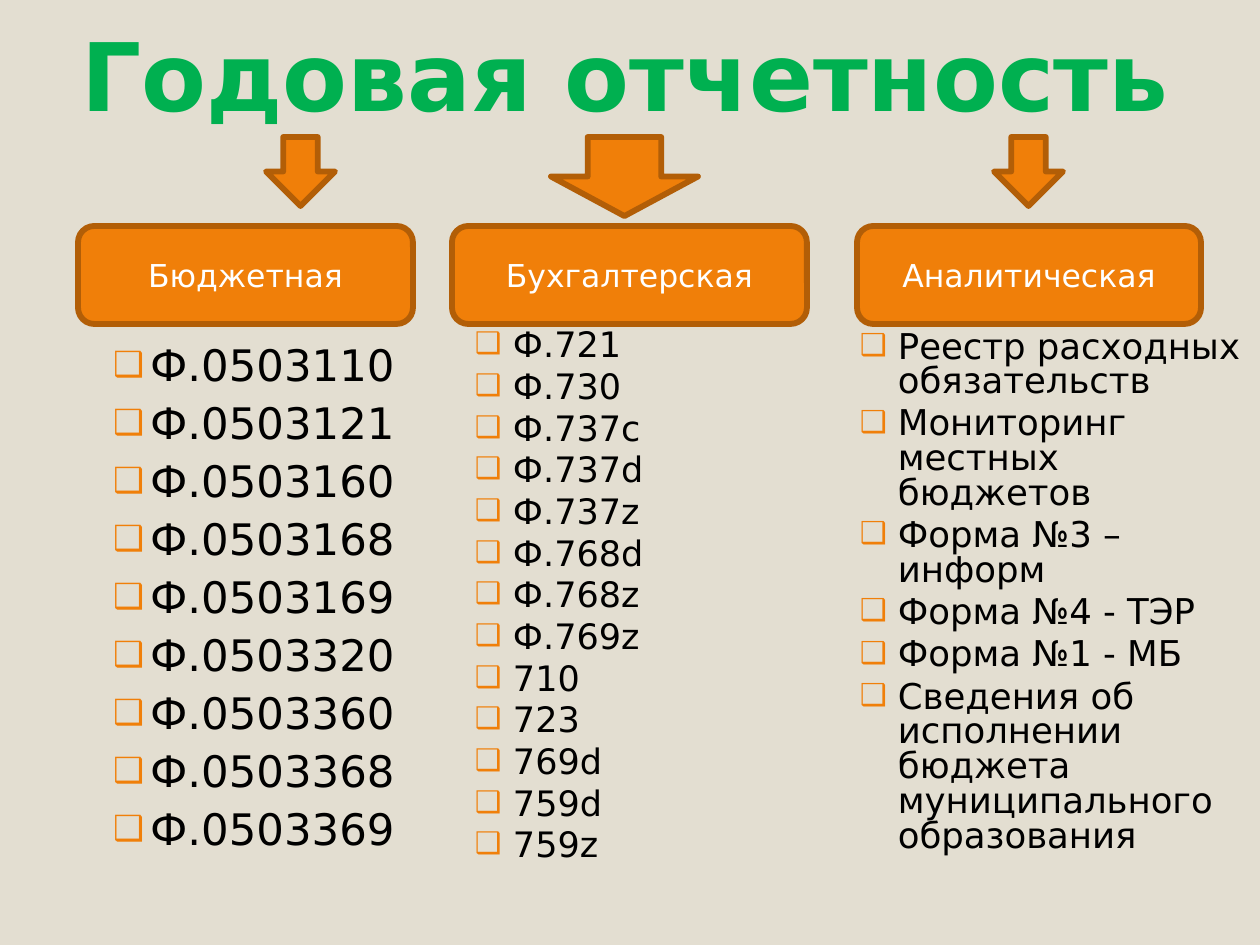
from lxml.etree import SubElement
from pptx import Presentation
from pptx.dml.color import RGBColor as RGB
from pptx.enum.shapes import MSO_SHAPE as SHAPE
from pptx.enum.text import MSO_ANCHOR as ANCHOR, PP_ALIGN as ALIGN
from pptx.oxml.ns import qn
from pptx.util import Emu, Pt

THEME = {
    "font": "DejaVu Sans",
    "background": RGB.from_string("E3DED1"),
    "title": RGB.from_string("00B050"),
    "accent": RGB.from_string("F07F09"),
    "outline": RGB.from_string("B25E07"),
    "label": RGB.from_string("FFFFFF"),
    "text": RGB.from_string("000000"),
    "title_size": 54,
    "label_size": 18,
    "line_width": 3.35,
}


def px(length):
    return Emu(round(length * 914400 / 126))


def write(paragraph, text, color, size, bold=False):
    run = paragraph.add_run()
    run.text = text
    values = {"name": THEME["font"], "size": Pt(size), "bold": bold}
    for name, value in values.items():
        setattr(run.font, name, value)
    run.font.color.rgb = color


presentation = Presentation()
presentation.slide_width, presentation.slide_height = px(1260), px(945)
slide = presentation.slides.add_slide(presentation.slide_layouts[6])
slide.background.fill.solid()
slide.background.fill.fore_color.rgb = THEME["background"]

title = slide.shapes.add_textbox(px(69), px(55), px(1128), px(82))
title.text_frame.word_wrap = True
title.text_frame.vertical_anchor = ANCHOR.BOTTOM
write(title.text_frame.paragraphs[0], "Годовая отчетность",
      THEME["title"], THEME["title_size"], True)

forms = ["Ф.0503110", "Ф.0503121", "Ф.0503160", "Ф.0503168", "Ф.0503169",
         "Ф.0503320", "Ф.0503360", "Ф.0503368", "Ф.0503369"]
accounts = ["Ф.721", "Ф.730", "Ф.737с", "Ф.737d", "Ф.737z", "Ф.768d", "Ф.768z",
            "Ф.769z", "710", "723", "769d", "759d", "759z"]
reports = ["Реестр расходных обязательств", "Мониторинг местных бюджетов",
           "Форма №3 – информ", "Форма №4 - ТЭР", "Форма №1 - МБ",
           "Сведения об исполнении бюджета муниципального образования"]

shapes = [
    (SHAPE.ROUNDED_RECTANGLE, 78, 226, 335, 98, "Бюджетная"),
    (SHAPE.ROUNDED_RECTANGLE, 452, 226, 355, 98, "Бухгалтерская"),
    (SHAPE.ROUNDED_RECTANGLE, 857, 226, 344, 98, "Аналитическая"),
    (SHAPE.DOWN_ARROW, 266, 137, 69, 69, ""),
    (SHAPE.DOWN_ARROW, 551, 137, 147, 79, ""),
    (SHAPE.DOWN_ARROW, 994, 137, 69, 69, ""),
]
for kind, left, top, width, height, label in shapes:
    shape = slide.shapes.add_shape(kind, px(left), px(top), px(width), px(height))
    shape.shadow.inherit = False
    shape.fill.solid()
    shape.fill.fore_color.rgb = THEME["accent"]
    shape.line.color.rgb = THEME["outline"]
    shape.line.width = Pt(THEME["line_width"])
    if label:
        shape.text_frame.vertical_anchor = ANCHOR.MIDDLE
        paragraph = shape.text_frame.paragraphs[0]
        paragraph.alignment = ALIGN.CENTER
        write(paragraph, label, THEME["label"], THEME["label_size"])

columns = [
    (forms, 88, 335, 571, 24.8, 37, 80, 25, 13,
     {"line_spacing": 1.0, "space_before": Pt(3.4)}),
    (accounts, 462, 335, 554, 20, 38, 85, 13, 6,
     {"line_spacing": 0.8, "space_before": Pt(4.6)}),
    (reports, 847, 413, 571, 20.3, 38, 85, 13, 6,
     {"line_spacing": 0.82, "space_before": Pt(4.1)}),
]
for items, left, width, height, size, indent, bullet_size, inset, top_inset, spacing in columns:
    box = slide.shapes.add_textbox(px(left), px(325), px(width), px(height))
    frame = box.text_frame
    frame_format = {"word_wrap": True, "margin_left": px(inset), "margin_top": px(top_inset)}
    for name, value in frame_format.items():
        setattr(frame, name, value)
    for index, item in enumerate(items):
        paragraph = frame.add_paragraph() if index else frame.paragraphs[0]
        for name, value in spacing.items():
            setattr(paragraph, name, value)
        write(paragraph, item, THEME["text"], size)
        properties = paragraph._p.get_or_add_pPr()
        properties.set("marL", str(px(indent)))
        properties.set("indent", str(-px(indent)))
        bullet_color = SubElement(properties, qn("a:buClr"))
        SubElement(bullet_color, qn("a:srgbClr"), val=str(THEME["accent"]))
        SubElement(properties, qn("a:buSzPct"), val=str(bullet_size * 1000))
        SubElement(properties, qn("a:buFont"), typeface=THEME["font"])
        SubElement(properties, qn("a:buChar"), char="❑")

presentation.save("out.pptx")
